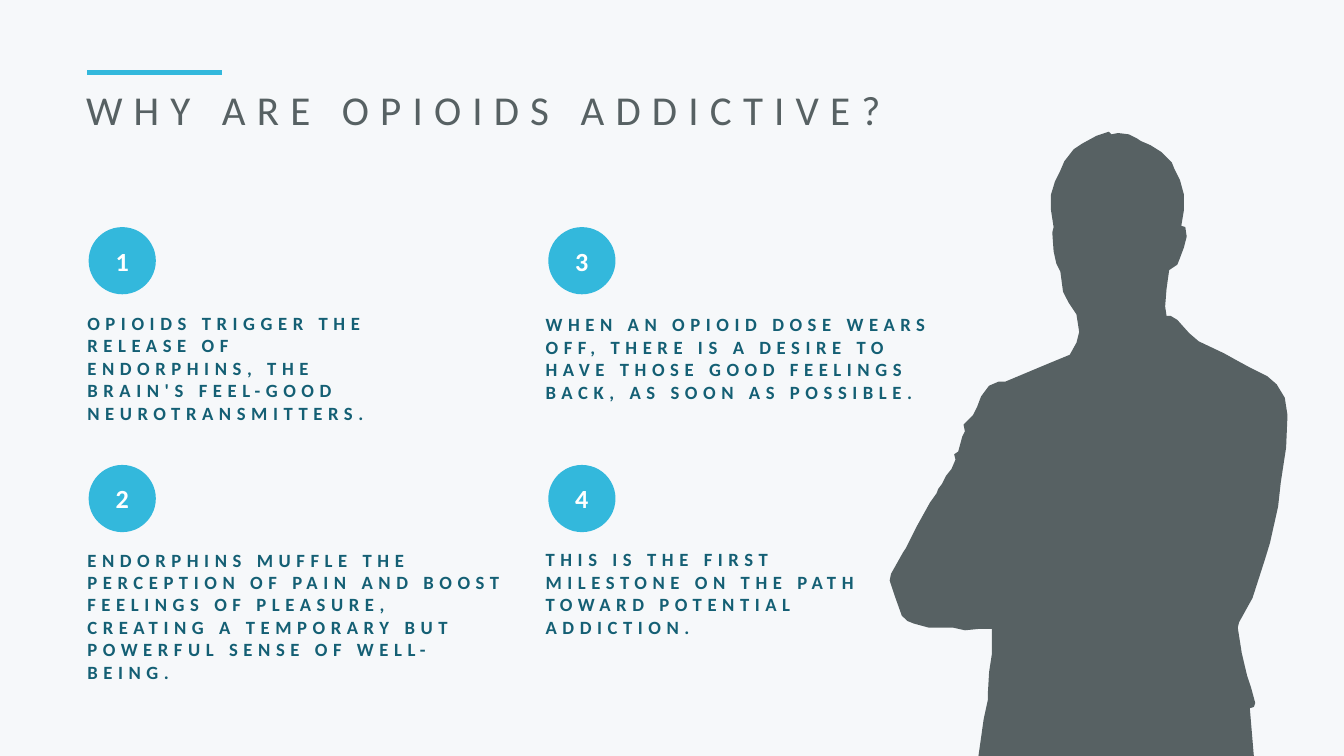
import pptx
import pptx.util
import pptx.dml.color
import pptx.enum.shapes
import pptx.enum.text
import pptx.oxml
from pptx.util import Inches

RGBColor = pptx.dml.color.RGBColor
PALE = RGBColor(0xF6, 0xF8, 0xFA)
BLUE = RGBColor(0x33, 0xB8, 0xDC)
TEAL = RGBColor(0x14, 0x5F, 0x74)
GRAY = RGBColor(0x57, 0x61, 0x63)
WHITE = RGBColor(0xFF, 0xFF, 0xFF)
SHAPE = pptx.enum.shapes.MSO_SHAPE
ANCHOR = pptx.enum.text.MSO_ANCHOR
ALIGN = pptx.enum.text.PP_ALIGN


def set_frame(frame, anchor):
    frame.margin_left = frame.margin_right = 0
    frame.margin_top = frame.margin_bottom = 0
    frame.word_wrap = True
    frame.auto_size = pptx.enum.text.MSO_AUTO_SIZE.NONE
    frame.vertical_anchor = anchor


def add_run(para, text, size, color, bold, gap):
    run = para.add_run()
    run.text = text
    run.font.name = "Calibri"
    run.font.size = pptx.util.Pt(size)
    run.font.bold = bold
    run.font.color.rgb = color
    run._r.get_or_add_rPr().set("spc", str(gap * 100))


# Widescreen slide, 16 to 9
deck = pptx.Presentation()
deck.slide_width = Inches(10)
deck.slide_height = Inches(10 * 9 / 16)
slide = deck.slides.add_slide(deck.slide_layouts[5])
slide.background.fill.solid()
slide.background.fill.fore_color.rgb = PALE

# Accent line
line = slide.shapes.add_connector(
    pptx.enum.shapes.MSO_CONNECTOR.STRAIGHT,
    Inches(0.65), Inches(0.54), Inches(1.65), Inches(0.54))
line.line.color.rgb = BLUE
line.line.width = pptx.util.Pt(2.25)
line._element.spPr.append(pptx.oxml.parse_xml(
    '<a:effectLst xmlns:a="http://schemas.openxmlformats.org/drawingml/2006/main"/>'))

# Figure with folded arms, in hundredths of an inch
POINTS = [
    # left side, from hem to elbow
    (728, 563), (729, 556), (732, 535), (735, 521), (735, 517), (736, 500),
    (738, 487), (738, 468), (728, 468), (718, 469), (709, 467), (701, 467),
    (691, 467), (680, 464), (675, 462), (671, 458), (666, 444), (662, 432),
    # left arm and shoulder
    (663, 427), (672, 411), (674, 408), (682, 392), (692, 374), (697, 367),
    (698, 364), (701, 360), (704, 354), (708, 349), (711, 342), (710, 338),
    (713, 336), (716, 325), (718, 321), (717, 316), (724, 309), (727, 303),
    (730, 295), (736, 287), (743, 284), (748, 284), (779, 271), (796, 264),
    # neck and left of the head
    (801, 255), (803, 247), (801, 234), (795, 225), (791, 217), (789, 202),
    (786, 196), (784, 187), (783, 173), (784, 169), (782, 156), (782, 145),
    (785, 135), (789, 127), (792, 120), (799, 111), (805, 107), (816, 101),
    # crown and right of the head
    (825, 98), (827, 100), (832, 99), (840, 100), (846, 103), (849, 105),
    (856, 108), (864, 113), (866, 115), (872, 121), (874, 126), (878, 134),
    (881, 145), (881, 156), (879, 168), (882, 169), (883, 176), (881, 184),
    (878, 192), (876, 197), (870, 201), (868, 215), (867, 228), (868, 235),
    # right shoulder and arm
    (871, 235), (876, 238), (885, 248), (892, 254), (911, 263), (920, 268),
    (931, 274), (943, 280), (950, 286), (956, 296), (958, 309), (957, 333),
    (953, 359), (951, 377), (945, 404), (941, 417), (932, 445), (922, 463),
    # right side, down to the hem
    (921, 467), (924, 486), (928, 503), (931, 512), (934, 523), (933, 526),
    (930, 527), (933, 563),
]
build = slide.shapes.build_freeform(*POINTS[0], scale=Inches(0.01))
build.add_line_segments(POINTS[1:], close=True)
man = build.convert_to_shape()
man.shadow.inherit = False
man.fill.solid()
man.fill.fore_color.rgb = GRAY
man.line.fill.background()

# Title
title = slide.shapes.title
title.left, title.top = Inches(0.64), Inches(0.63)
title.width, title.height = Inches(8.7), Inches(0.42)
set_frame(title.text_frame, ANCHOR.TOP)
para = title.text_frame.paragraphs[0]
para.alignment = ALIGN.LEFT
add_run(para, "WHY ARE OPIOIDS ADDICTIVE?", 22, GRAY, False, 6)

# Numbered reasons, down each column: text, top, width, height
REASONS = [
    ("OPIOIDS TRIGGER THE RELEASE OF ENDORPHINS, THE BRAIN'S FEEL-GOOD "
     "NEUROTRANSMITTERS.", 2.32, 2.31, 1.01),
    ("ENDORPHINS MUFFLE THE PERCEPTION OF PAIN AND BOOST FEELINGS OF PLEASURE, "
     "CREATING A TEMPORARY BUT POWERFUL SENSE OF WELL-BEING.", 4.08, 3.15, 1.18),
    ("WHEN AN OPIOID DOSE WEARS OFF, THERE IS A DESIRE TO HAVE THOSE GOOD "
     "FEELINGS BACK, AS SOON AS POSSIBLE.", 2.33, 3.05, 1.01),
    ("THIS IS THE FIRST MILESTONE ON THE PATH TOWARD POTENTIAL ADDICTION.",
     4.08, 2.6, 0.84),
]
for i, (text, top, width, height) in enumerate(REASONS):
    col, row = divmod(i, 2)
    box = slide.shapes.add_textbox(
        Inches(0.65 + col * 3.41), Inches(top), Inches(width), Inches(height))
    set_frame(box.text_frame, ANCHOR.TOP)
    add_run(box.text_frame.paragraphs[0], text, 10, TEAL, True, 3)

    dot = slide.shapes.add_shape(
        SHAPE.OVAL, Inches(0.66 + col * 3.42), Inches(1.69 + row * 1.77),
        Inches(0.5), Inches(0.5))
    dot.shadow.inherit = False
    dot.fill.solid()
    dot.fill.fore_color.rgb = BLUE
    dot.line.fill.background()
    set_frame(dot.text_frame, ANCHOR.MIDDLE)
    para = dot.text_frame.paragraphs[0]
    para.alignment = ALIGN.CENTER
    add_run(para, str(i + 1), 14, WHITE, True, 3)

deck.save("out.pptx")
